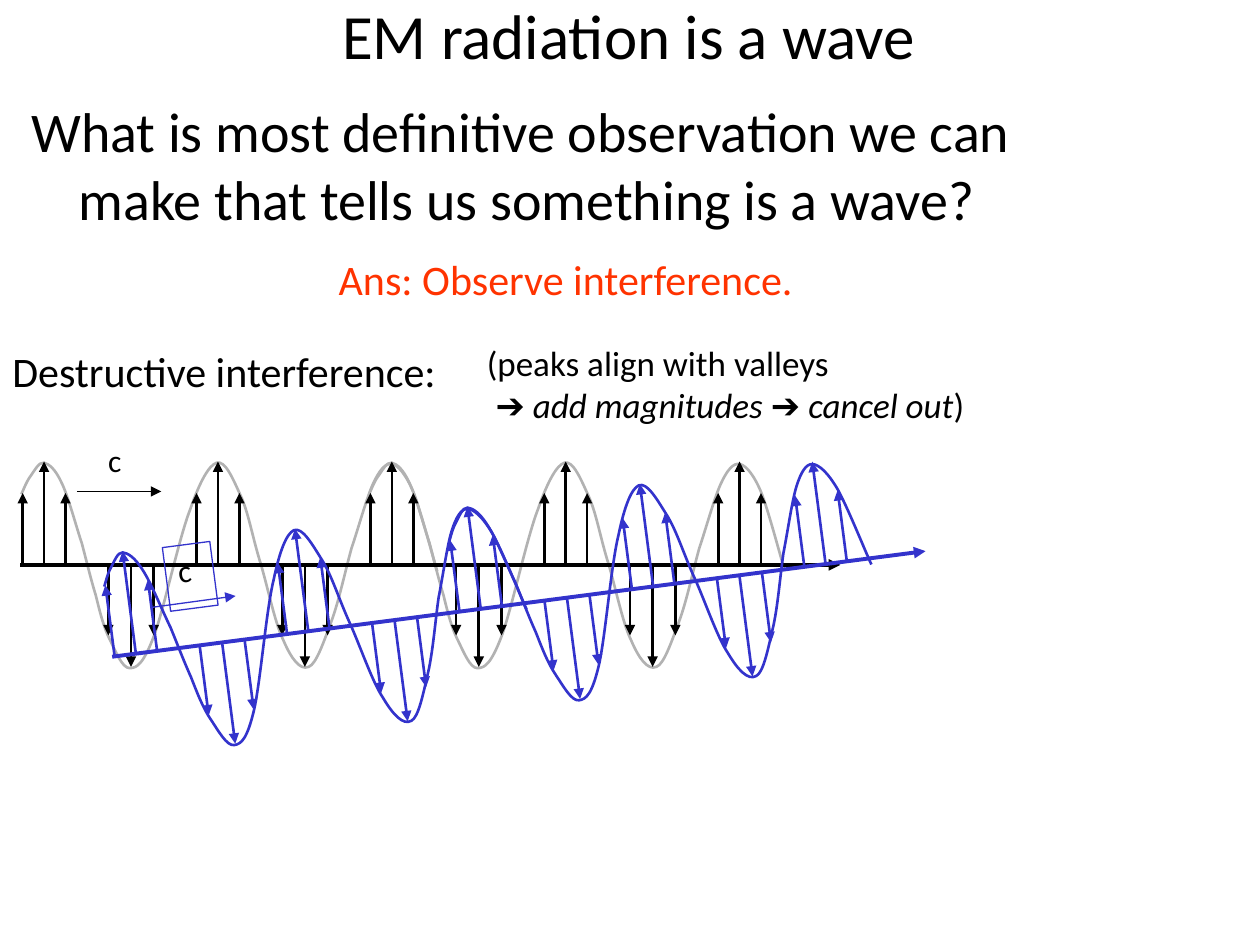
import math
from dataclasses import dataclass
from typing import NamedTuple

from lxml import etree
from pptx import Presentation
from pptx import util as u
from pptx.dml.color import RGBColor
from pptx.enum import shapes, text
from pptx.oxml.ns import qn

COLUMNS, ROWS = 100, 75
CELL = u.Inches(0.1)
LINE_BREAK = "\v"


@dataclass(frozen=True)
class Theme:
    ink: str = "000000"
    answer: str = "FF3300"
    gray_wave: str = "B2B2B2"
    blue_wave: str = "3333CC"
    font: str = "Calibri"
    symbol_font: str = "Arial"
    title: int = 36
    question: int = 32
    heading: int = 24
    remark: int = 20
    label: int = 18
    thin: float = 0.75
    medium: float = 1.5
    thick: float = 2.25


class Point(NamedTuple):
    column: float
    row: float


class Box(NamedTuple):
    column: float
    row: float
    columns: float
    rows: float


class Span(NamedTuple):
    words: str
    font: str = ""
    italic: bool = False


@dataclass(frozen=True)
class Wave:
    origin: Point
    tilt: float
    curve_color: str
    arrow_color: str

    def place(self, point: Point) -> Point:
        """Turn a point by the tilt and move it to the wave's origin."""
        angle = math.radians(self.tilt)
        sine, cosine = math.sin(angle), math.cos(angle)
        return Point(self.origin.column + point.column * cosine - point.row * sine,
                     self.origin.row + point.column * sine + point.row * cosine)


THEME = Theme()
TILT = -7.4
BLACK_WAVE = Wave(Point(1.8, 44.83), 0, THEME.gray_wave, THEME.ink)
BLUE_WAVE = Wave(Point(9.1, 52.1), TILT, THEME.blue_wave, THEME.blue_wave)
PERIOD = 13.8
AXIS = (-0.2, 64.9)
# Field vectors of one period: column from its start, and signed height
PEAK = ((0, -5.7), (1.7, -8.2), (3.4, -5.7))
VALLEY = ((6.8, 5.6), (8.6, 8.1), (10.4, 5.6))
# Two periods of the curve: start point, then control, control, end
CURVE = [Point(*pair) for pair in (
    (-0.1, -5.6),
    (0, -5.8), (0.3, -6.6), (0.6, -7), (0.9, -7.4), (1.3, -8.2), (1.7, -8.1),
    (2.1, -8), (2.6, -7.6), (3.1, -6.5), (3.6, -5.5), (4.2, -3.2), (4.7, -1.7),
    (5.1, -0.2), (5.4, 1.1), (5.8, 2.4), (6.1, 3.6), (6.4, 4.9), (6.9, 5.9),
    (7.4, 6.9), (7.9, 8.2), (8.5, 8.2), (9.1, 8.2), (9.6, 7.8), (10.4, 5.7),
    (11.2, 3.6), (12.4, -2.1), (13.3, -4.4), (14.1, -6.7), (14.8, -7.9), (15.4, -8.1),
    (16.1, -8.3), (16.7, -6.8), (17.3, -5.5), (17.9, -4.2), (18.2, -2.4), (18.8, -0.4),
    (19.4, 1.5), (20, 4.6), (20.7, 6), (21.3, 7.4), (22, 8.4), (22.7, 8.1),
    (23.3, 7.9), (23.9, 6.1), (24.5, 4.5), (25.1, 2.9), (25.6, 0.5), (26.1, -1.3),
    (26.7, -3.1), (27.3, -5.3), (27.8, -6.4), (28.3, -7.5), (28.8, -8.1), (29.3, -8),
    (29.8, -7.9), (30.4, -7.2), (31, -5.8), (31.6, -4.3), (32.5, -0.8), (32.9, 0.5),
)]


def cells(*lengths: float) -> list[int]:
    return [round(length * CELL) for length in lengths]


def style_line(line, color: str, width: float) -> None:
    line.color.rgb = RGBColor.from_string(color)
    line.width = u.Pt(width)


def write(canvas, box: Box, *spans: Span, size: int, color: str = THEME.ink,
          wrap: bool = False, centered: bool = False, outline: str = "",
          rotation: float = 0, margin: float = 0, indent: float = 0) -> None:
    if outline:
        shape = canvas.add_shape(shapes.MSO_SHAPE.RECTANGLE, *cells(*box))
        shape.shadow.inherit = False
        shape.fill.background()
        style_line(shape.line, outline, THEME.thin)
    else:
        shape = canvas.add_textbox(*cells(*box))
    shape.rotation = rotation
    frame = shape.text_frame
    frame.word_wrap = wrap
    frame.vertical_anchor = text.MSO_ANCHOR.MIDDLE if centered else text.MSO_ANCHOR.TOP
    paragraph = frame.paragraphs[0]
    paragraph.alignment = text.PP_ALIGN.CENTER if centered else text.PP_ALIGN.LEFT
    properties = paragraph._p.get_or_add_pPr()
    for name, length in zip(("marL", "indent"), cells(margin, indent)):
        properties.set(name, str(length))
    for span in spans:
        if span.words == LINE_BREAK:
            paragraph.add_line_break()
            continue
        run = paragraph.add_run()
        run.text = span.words
        run.font.name = span.font or THEME.font
        run.font.size = u.Pt(size)
        run.font.italic = span.italic
        run.font.color.rgb = RGBColor.from_string(color)


def draw_arrow(canvas, start: Point, end: Point, color: str, width: float) -> None:
    arrow = canvas.add_connector(shapes.MSO_CONNECTOR.STRAIGHT, *cells(*start, *end))
    style_line(arrow.line, color, width)
    etree.SubElement(arrow.line._get_or_add_ln(), qn("a:tailEnd"), type="triangle")
    etree.SubElement(arrow._element.spPr, qn("a:effectLst"))


def bend(curve) -> None:
    """Turn every three line segments of a freeform into one cubic curve."""
    outline = curve._element.spPr.find(".//" + qn("a:path"))
    segments = outline.findall(qn("a:lnTo"))
    for first in range(0, len(segments), 3):
        cubic = etree.SubElement(outline, qn("a:cubicBezTo"))
        for segment in segments[first:first + 3]:
            cubic.append(segment[0])
            outline.remove(segment)


def draw_curve(canvas, wave: Wave, shift: float) -> None:
    points = [cells(p.column + shift, p.row) for p in CURVE]
    builder = canvas.build_freeform(*points[0])
    builder.add_line_segments(points[1:], close=False)
    curve = builder.convert_to_shape()
    bend(curve)
    middle = wave.place(Point((curve.left + curve.width / 2) / CELL,
                              (curve.top + curve.height / 2) / CELL))
    column, row = cells(*middle)
    curve.left = column - curve.width // 2
    curve.top = row - curve.height // 2
    curve.rotation = wave.tilt
    curve.shadow.inherit = False
    curve.fill.background()
    style_line(curve.line, wave.curve_color, THEME.medium)


def draw_wave(canvas, wave: Wave) -> None:
    for shift in (0, 2 * PERIOD):
        draw_curve(canvas, wave, shift)
    start, end = (wave.place(Point(column, 0)) for column in AXIS)
    draw_arrow(canvas, start, end, wave.arrow_color, THEME.thick)
    for period in range(5):
        for offset, height in PEAK + VALLEY if period < 4 else PEAK:
            column = period * PERIOD + offset
            draw_arrow(canvas, wave.place(Point(column, 0)), wave.place(Point(column, height)),
                       wave.arrow_color, THEME.medium)


def main() -> None:
    presentation = Presentation()
    presentation.slide_width, presentation.slide_height = cells(COLUMNS, ROWS)
    slide = presentation.slides.add_slide(presentation.slide_layouts[6])
    canvas = slide.shapes

    write(canvas, Box(4.9, 0, 90, 5.4), Span("EM radiation is a wave"),
          size=THEME.title, wrap=True, centered=True)
    write(canvas, Box(1.5, 7.2, 90, 49.5),
          Span("What is most definitive observation we can make that tells us "
               "something is a wave?"),
          size=THEME.question, wrap=True, margin=3.75, indent=-3.75)
    write(canvas, Box(0, 26.9, 36, 5), Span("Destructive interference:"), size=THEME.heading)

    draw_wave(canvas.add_group_shape().shapes, BLACK_WAVE)
    draw_arrow(canvas, Point(6.1, 39), Point(12.8, 39), THEME.ink, THEME.thin)
    write(canvas, Box(7.6, 34.5, 3.7, 5), Span("c"), size=THEME.label)

    arrow = Span("➔", THEME.symbol_font)
    write(canvas, Box(37.1, 26.6, 57.9, 7.7),
          Span("(peaks align with valleys"), Span(LINE_BREAK),
          arrow, Span(" add magnitudes ", italic=True),
          arrow, Span(" cancel out", italic=True), Span(")"),
          size=THEME.remark, wrap=True, margin=1.25, indent=-0.7)

    blue_group = canvas.add_group_shape().shapes
    draw_wave(blue_group, BLUE_WAVE)
    draw_arrow(blue_group, Point(12.1, 48.2), Point(18.7, 47.3), THEME.blue_wave, THEME.thin)
    write(blue_group, Box(13.2, 43.2, 3.8, 5.1), Span("c"), size=THEME.label,
          outline=THEME.blue_wave, rotation=TILT)

    write(canvas, Box(25.9, 19.6, 38.4, 5), Span("Ans: Observe interference."),
          size=THEME.heading, color=THEME.answer)
    presentation.save("out.pptx")


if __name__ == "__main__":
    main()
